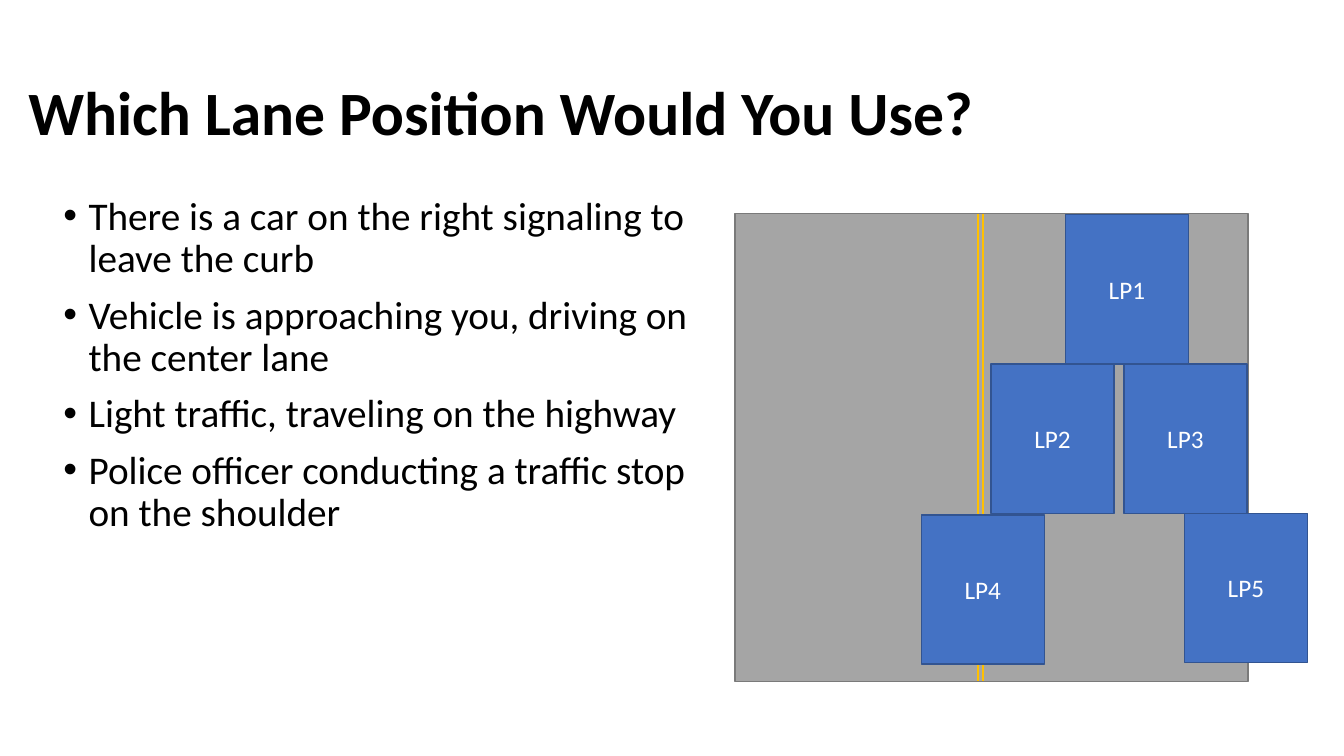
from pptx import Presentation
from pptx.dml.color import RGBColor
from pptx.enum import shapes, text
from pptx.oxml import parse_xml
from pptx.oxml import ns
from pptx.util import Pt

COLORS = {"ink": "000000", "white": "FFFFFF", "road": "A5A5A5", "road_edge": "7A7A7A",
          "center_line": "FFC000", "car": "4472C4", "car_edge": "325491"}
ROAD_LEFT, ROAD_TOP, ROAD_WIDTH, ROAD_HEIGHT = 524.9, 152.6, 366.5, 334.1
CAR_WIDTH, CAR_HEIGHT = 87.9, 106.6


def add_run(p, words, size, color, bold=False):
    r = p.add_run()
    r.text = words
    r.font.name = "Calibri"
    r.font.size = Pt(size)
    r.font.bold = bold
    r.font.color.rgb = RGBColor.from_string(COLORS[color])


def add_box(left, top, width, height, fill, edge):
    sp = s.shapes.add_shape(shapes.MSO_SHAPE.RECTANGLE, Pt(left), Pt(top), Pt(width), Pt(height))
    sp.shadow.inherit = False
    sp.fill.solid()
    sp.fill.fore_color.rgb = RGBColor.from_string(COLORS[fill])
    sp.line.color.rgb = RGBColor.from_string(COLORS[edge])
    sp.line.width = Pt(1)
    return sp


prs = Presentation()
prs.slide_width, prs.slide_height = Pt(960), Pt(540)
s = prs.slides.add_slide(prs.slide_layouts[5])

title = s.shapes.title
title.left, title.top, title.width, title.height = Pt(13), Pt(30), Pt(828), Pt(104.4)
tf = title.text_frame
tf.word_wrap = True
tf.auto_size = text.MSO_AUTO_SIZE.NONE
tf.vertical_anchor = text.MSO_ANCHOR.MIDDLE
p = tf.paragraphs[0]
p.alignment = text.PP_ALIGN.LEFT
p.line_spacing = 0.9
add_run(p, "Which Lane Position Would You Use?", 44, "ink", True)

situations = [
    "There is a car on the right signaling to leave the curb",
    "Vehicle is approaching you, driving on the center lane",
    "Light traffic, traveling on the highway",
    "Police officer conducting a traffic stop on the shoulder",
]
tf = s.shapes.add_textbox(Pt(38.2), Pt(136.8), Pt(483), Pt(350)).text_frame
tf.word_wrap = True
for i, situation in enumerate(situations):
    p = tf.add_paragraph() if i else tf.paragraphs[0]
    pPr = p._p.get_or_add_pPr()
    pPr.set("marL", str(Pt(18)))
    pPr.set("indent", str(Pt(-18)))
    pPr.append(parse_xml(f'<a:buFont {ns.nsdecls("a")} typeface="Arial"/>'))
    pPr.append(parse_xml(f'<a:buChar {ns.nsdecls("a")} char="•"/>'))
    p.line_spacing = 0.9
    p.space_before = Pt(10 if i else 0)
    add_run(p, situation, 28, "ink")

add_box(ROAD_LEFT, ROAD_TOP, ROAD_WIDTH, ROAD_HEIGHT, "road", "road_edge")

for x in (698.4, 702.2):
    stripe = s.shapes.add_connector(shapes.MSO_CONNECTOR.STRAIGHT, Pt(x), Pt(ROAD_TOP),
                                    Pt(x), Pt(ROAD_TOP + ROAD_HEIGHT))
    stripe.line.color.rgb = RGBColor.from_string(COLORS["center_line"])
    stripe.line.width = Pt(1.5)
    stripe._element.spPr.append(parse_xml(f'<a:effectLst {ns.nsdecls("a")}/>'))

positions = [(761, 153.4), (707.8, 260), (802.8, 260), (658, 367.8), (846, 366.6)]
for number, (left, top) in enumerate(positions, 1):
    sp = add_box(left, top, CAR_WIDTH, CAR_HEIGHT, "car", "car_edge")
    tf = sp.text_frame
    tf.vertical_anchor = text.MSO_ANCHOR.MIDDLE
    p = tf.paragraphs[0]
    p.alignment = text.PP_ALIGN.CENTER
    add_run(p, f"LP{number}", 18, "white")

prs.save("out.pptx")
